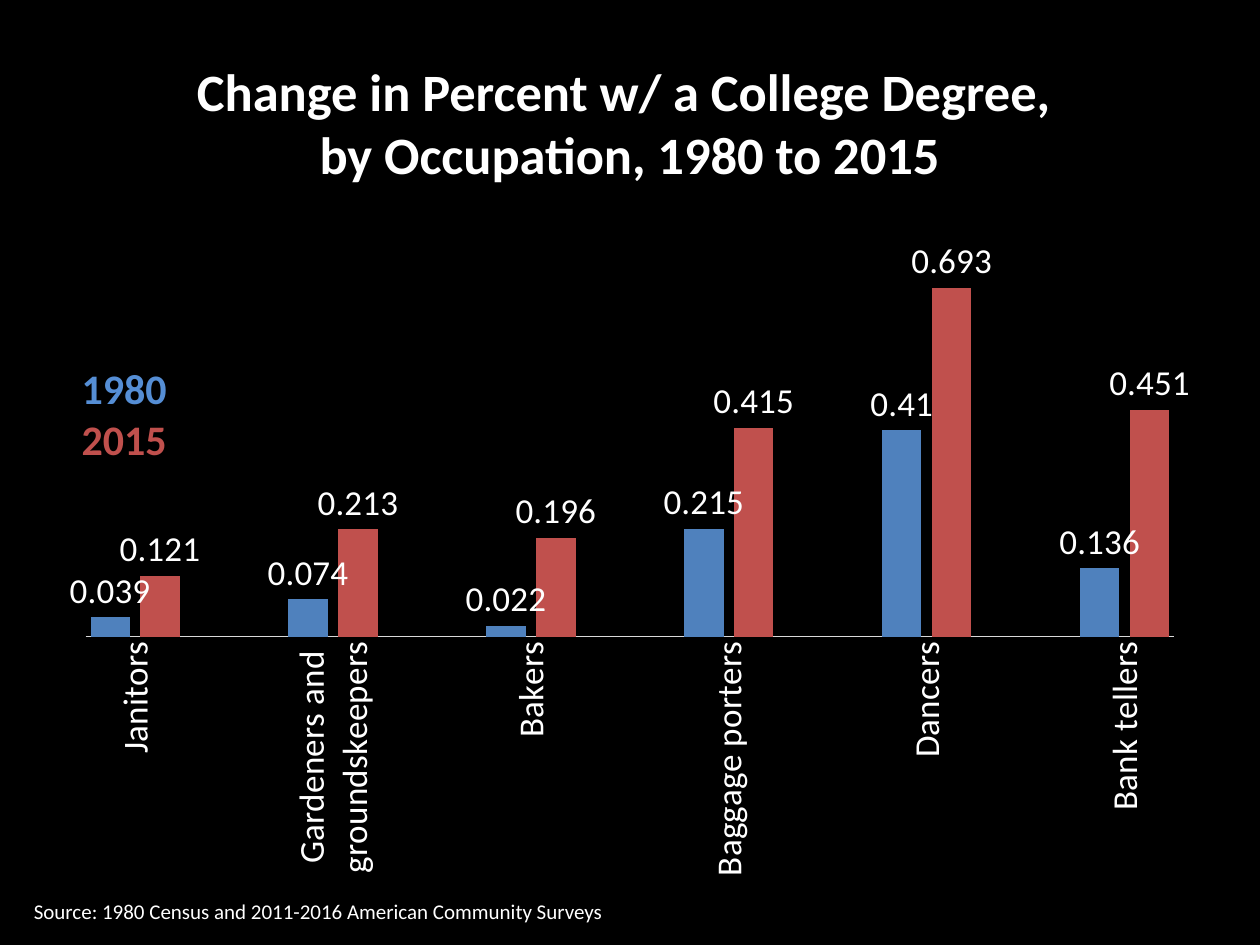
"""Build the slide on college degrees by occupation, 1980 to 2015."""
from dataclasses import dataclass

from lxml.etree import SubElement
from pptx import Presentation
from pptx.chart.data import CategoryChartData
from pptx.dml.color import RGBColor
from pptx.enum.chart import XL_CHART_TYPE as ChartType
from pptx.enum.chart import XL_LABEL_POSITION as LabelPosition
from pptx.enum.chart import XL_TICK_LABEL_POSITION as TickLabels
from pptx.enum.chart import XL_TICK_MARK as TickMark
from pptx.enum.text import MSO_ANCHOR as Anchor
from pptx.enum.text import MSO_AUTO_SIZE as AutoSize
from pptx.enum.text import PP_ALIGN as Align
from pptx.oxml.ns import qn
from pptx.util import Inches, Pt


@dataclass(frozen=True)
class Theme:
    """Colours, font and type sizes of the slide."""

    font: str = "Calibri"
    background: str = "000000"
    text: str = "FFFFFF"
    axis: str = "D9D9D9"
    bar_1980: str = "4F81BD"
    bar_2015: str = "C0504D"
    label_1980: str = "558ED5"
    title_size: int = 30
    legend_size: int = 24
    chart_size: int = 20
    source_size: int = 12


@dataclass(frozen=True)
class Box:
    """Position and size in inches."""

    left: float
    top: float
    width: float
    height: float

    def lengths(self) -> list:
        """Return the four lengths in the order python-pptx expects."""
        return [Inches(value) for value in (self.left, self.top, self.width, self.height)]


@dataclass(frozen=True)
class Line:
    """One paragraph and its colour."""

    text: str
    color: str


@dataclass(frozen=True)
class Occupation:
    """Share of workers with a college degree in both years."""

    name: str
    share_1980: float
    share_2015: float


THEME = Theme()
OCCUPATIONS = [
    Occupation("Janitors", 0.039, 0.121),
    Occupation("Gardeners and\ngroundskeepers", 0.074, 0.213),
    Occupation("Bakers", 0.022, 0.196),
    Occupation("Baggage porters", 0.215, 0.415),
    Occupation("Dancers", 0.41, 0.693),
    Occupation("Bank tellers", 0.136, 0.451),
]
PLOT_LAYOUT = {"x": 0.02, "y": 0.02, "w": 0.96, "h": 0.6}


def apply(target, formats: dict) -> None:
    """Set each attribute of the target from a dict."""
    for name, value in formats.items():
        setattr(target, name, value)


def format_font(font, size: int, color: str, bold: bool = False) -> None:
    """Give a font its face, size, weight and colour."""
    apply(font, {"name": THEME.font, "size": Pt(size), "bold": bold})
    font.color.rgb = RGBColor.from_string(color)


def write_lines(shape, lines: list[Line], size: int, bold: bool = False,
                align: Align = Align.LEFT, anchor: Anchor = Anchor.TOP) -> None:
    """Fill a shape with one paragraph for each line."""
    frame = shape.text_frame
    frame.text = "\n".join(line.text for line in lines)
    apply(frame, {"word_wrap": False, "auto_size": AutoSize.NONE, "vertical_anchor": anchor})
    for paragraph, line in zip(frame.paragraphs, lines):
        paragraph.alignment = align
        format_font(paragraph.runs[0].font, size, line.color, bold)


def add_text(slide, box: Box, lines: list[Line], size: int, bold: bool = False) -> None:
    """Add a text box."""
    write_lines(slide.shapes.add_textbox(*box.lengths()), lines, size, bold)


def spaced(values: list, gap) -> list:
    """Put a gap between neighbouring values."""
    return [item for value in values for item in (value, gap)][:-1]


def set_plot_layout(chart) -> None:
    """Fix the inner plot area as fractions of the chart."""
    plot_area = chart.plots[0]._element.getparent()
    layout = plot_area.find(qn("c:layout"))
    if layout is None:
        layout = plot_area.makeelement(qn("c:layout"))
        plot_area.insert(0, layout)
    manual = SubElement(layout, qn("c:manualLayout"))
    settings = {"layoutTarget": "inner", "xMode": "edge", "yMode": "edge", **PLOT_LAYOUT}
    for name, value in settings.items():
        SubElement(manual, qn(f"c:{name}")).set("val", str(value))


def format_axes(chart) -> None:
    """Turn the category names upright and hide the value axis."""
    category_axis, value_axis = chart.category_axis, chart.value_axis
    apply(category_axis, {"major_tick_mark": TickMark.NONE, "minor_tick_mark": TickMark.NONE,
                          "has_major_gridlines": False,
                          "tick_label_position": TickLabels.NEXT_TO_AXIS})
    category_axis.tick_labels.offset = 0
    format_font(category_axis.tick_labels.font, THEME.chart_size, THEME.text)
    body = category_axis._element.find(f"{qn('c:txPr')}/{qn('a:bodyPr')}")
    body.set("rot", "-5400000")
    body.set("vert", "horz")
    axis_line = category_axis.format.line
    axis_line.width = Pt(0.75)
    axis_line.color.rgb = RGBColor.from_string(THEME.axis)
    apply(value_axis, {"visible": False, "has_major_gridlines": False,
                       "minimum_scale": 0, "maximum_scale": 0.8})


def add_degree_chart(slide, box: Box, occupations: list[Occupation]) -> None:
    """Add the column chart with an empty category between occupations."""
    data = CategoryChartData()
    data.categories = spaced([item.name for item in occupations], "")
    data.add_series("Series 1", spaced([item.share_1980 for item in occupations], None))
    data.add_series("Series 2", spaced([item.share_2015 for item in occupations], None))
    chart = slide.shapes.add_chart(ChartType.COLUMN_CLUSTERED, *box.lengths(), data).chart
    apply(chart, {"has_title": False, "has_legend": False})
    format_font(chart.font, THEME.chart_size, THEME.text)
    plot = chart.plots[0]
    apply(plot, {"gap_width": 25, "overlap": -27, "vary_by_categories": False})
    for series, color in zip(plot.series, (THEME.bar_1980, THEME.bar_2015)):
        series.invert_if_negative = False
        series.format.fill.solid()
        series.format.fill.fore_color.rgb = RGBColor.from_string(color)
        labels = series.data_labels
        apply(labels, {"show_value": True, "position": LabelPosition.OUTSIDE_END})
        format_font(labels.font, THEME.chart_size, THEME.text)
    format_axes(chart)
    set_plot_layout(chart)


def main() -> None:
    """Build and save the presentation."""
    presentation = Presentation()
    apply(presentation, {"slide_width": Inches(10), "slide_height": Inches(7.5)})
    slide = presentation.slides.add_slide(presentation.slide_layouts[5])
    background = slide.background.fill
    background.solid()
    background.fore_color.rgb = RGBColor.from_string(THEME.background)

    title = slide.shapes.title
    apply(title, dict(zip(("left", "top", "width", "height"),
                          Box(1.43, 0.42, 7.14, 1.11).lengths())))
    write_lines(title, [Line("Change in Percent w/ a College Degree, ", THEME.text),
                        Line("by Occupation, 1980 to 2015", THEME.text)],
                THEME.title_size, True, Align.CENTER)
    add_degree_chart(slide, Box(0.5, 1.75, 9, 5.33), OCCUPATIONS)
    add_text(slide, Box(0.17, 7.08, 4.73, 0.3),
             [Line("Source: 1980 Census and 2011-2016 American Community Surveys", THEME.text)],
             THEME.source_size)
    add_text(slide, Box(0.55, 2.83, 0.88, 0.91),
             [Line("1980", THEME.label_1980), Line("2015", THEME.bar_2015)],
             THEME.legend_size, True)
    presentation.save("out.pptx")


if __name__ == "__main__":
    main()
